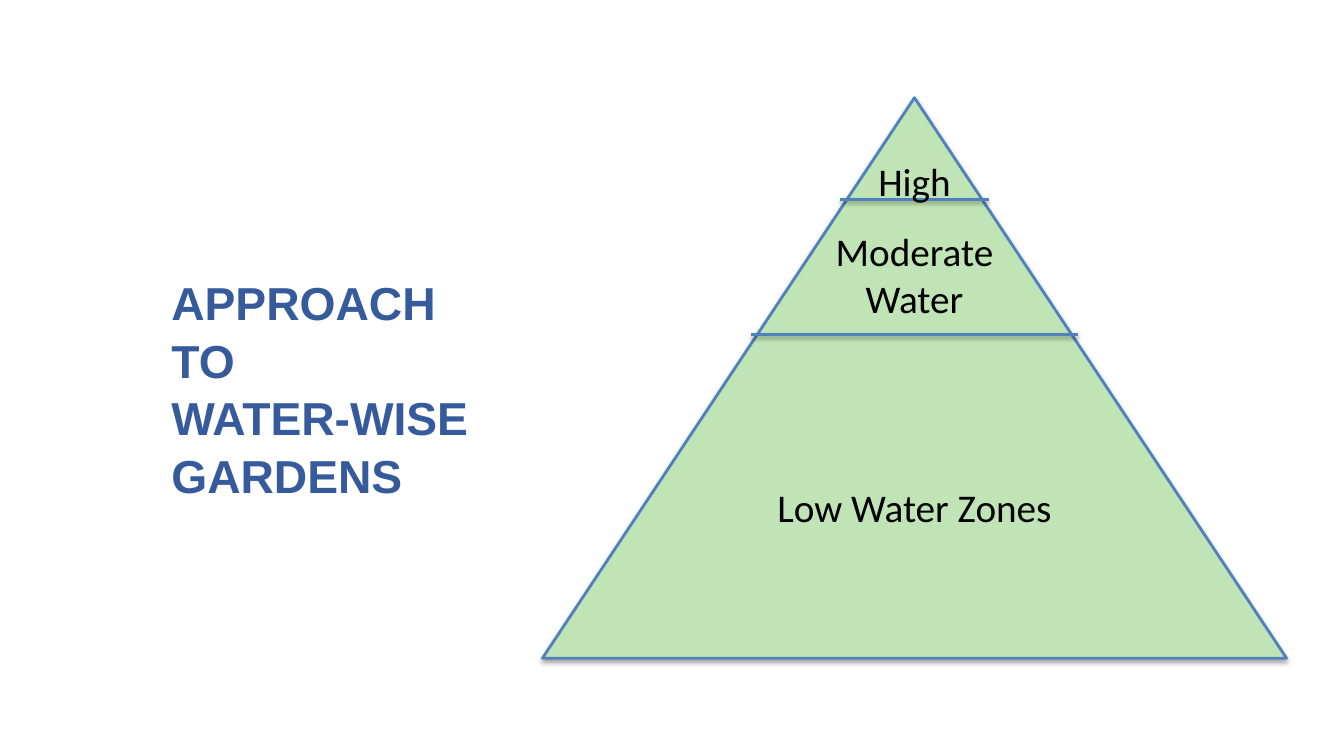
from lxml import etree
from pptx import Presentation
from pptx.dml.color import RGBColor
from pptx.enum import shapes, text
from pptx.oxml import ns
from pptx.util import Inches, Pt

NAVY = RGBColor(0x36, 0x5B, 0x9D)
GREEN = RGBColor(0xC0, 0xE4, 0xB5)
BLUE = RGBColor(0x4F, 0x81, 0xBD)
BLACK = RGBColor(0, 0, 0)

TITLE = {"size": Pt(33), "name": "Arial", "bold": True}
LABEL = {"size": Pt(28), "name": "Calibri"}


def shade(shape):
    """Outline the shape and give it a soft shadow straight below."""
    shape.line.color.rgb = BLUE
    shape.line.width = Pt(2)
    props = shape._element.spPr
    effects = etree.SubElement(props, ns.qn("a:effectLst"))
    cast = etree.SubElement(
        effects, ns.qn("a:outerShdw"),
        blurRad=str(Pt(3)), dist=str(Pt(1.8)), dir="5400000", rotWithShape="0")
    tint = etree.SubElement(cast, ns.qn("a:srgbClr"), val="000000")
    etree.SubElement(tint, ns.qn("a:alpha"), val="35000")


def write(slide, box, lines, style, color, align, wrap, spacing=None):
    """Put one paragraph per line into a text box."""
    frame = slide.shapes.add_textbox(*map(Inches, box)).text_frame
    frame.word_wrap = wrap
    frame.auto_size = text.MSO_AUTO_SIZE.SHAPE_TO_FIT_TEXT
    for side in ("left", "top", "right", "bottom"):
        setattr(frame, f"margin_{side}", Inches(0.05))
    frame.text = "\n".join(lines)
    for para in frame.paragraphs:
        para.alignment = align
        para.line_spacing = spacing
        for key, value in style.items():
            setattr(para.font, key, value)
        para.font.color.rgb = color


def title(slide, box):
    lines = ["APPROACH", "TO", "WATER-WISE", "GARDENS"]
    write(slide, box, lines, TITLE, NAVY, text.PP_ALIGN.LEFT, True, 1.04)


def pyramid(slide, box):
    left, top, width, height = box
    mid = left + width / 2
    base = top + height

    pen = slide.shapes.build_freeform(Inches(mid), Inches(top))
    pen.add_line_segments(
        [(Inches(left + width), Inches(base)), (Inches(left), Inches(base))],
        close=True)
    body = pen.convert_to_shape()
    body.fill.solid()
    body.fill.fore_color.rgb = GREEN
    shade(body)

    for drop, span in ((1.01, 1.48), (2.35, 3.24)):
        start, level = mid - span / 2, top + drop
        rule = slide.shapes.add_connector(
            shapes.MSO_CONNECTOR.STRAIGHT, Inches(start), Inches(level),
            Inches(start + span), Inches(level))
        shade(rule)

    zones = (
        (["Low Water Zones"], 3.78, 2.84, 0.49),
        (["High"], 0.54, 0.9, 0.95),
        (["Moderate", "Water"], 1.24, 1.68, 0.96),
    )
    for lines, drop, wide, tall in zones:
        area = (mid - wide / 2, top + drop, wide, tall)
        write(slide, area, lines, LABEL, BLACK, text.PP_ALIGN.CENTER, False)


def main():
    deck = Presentation()
    deck.slide_width = Inches(13.33)
    deck.slide_height = Inches(7.5)
    slide = deck.slides.add_slide(deck.slide_layouts[6])
    title(slide, (1.65, 2.65, 3.07, 2.2))
    pyramid(slide, (5.38, 0.97, 7.38, 5.56))
    deck.save("out.pptx")


if __name__ == "__main__":
    main()
